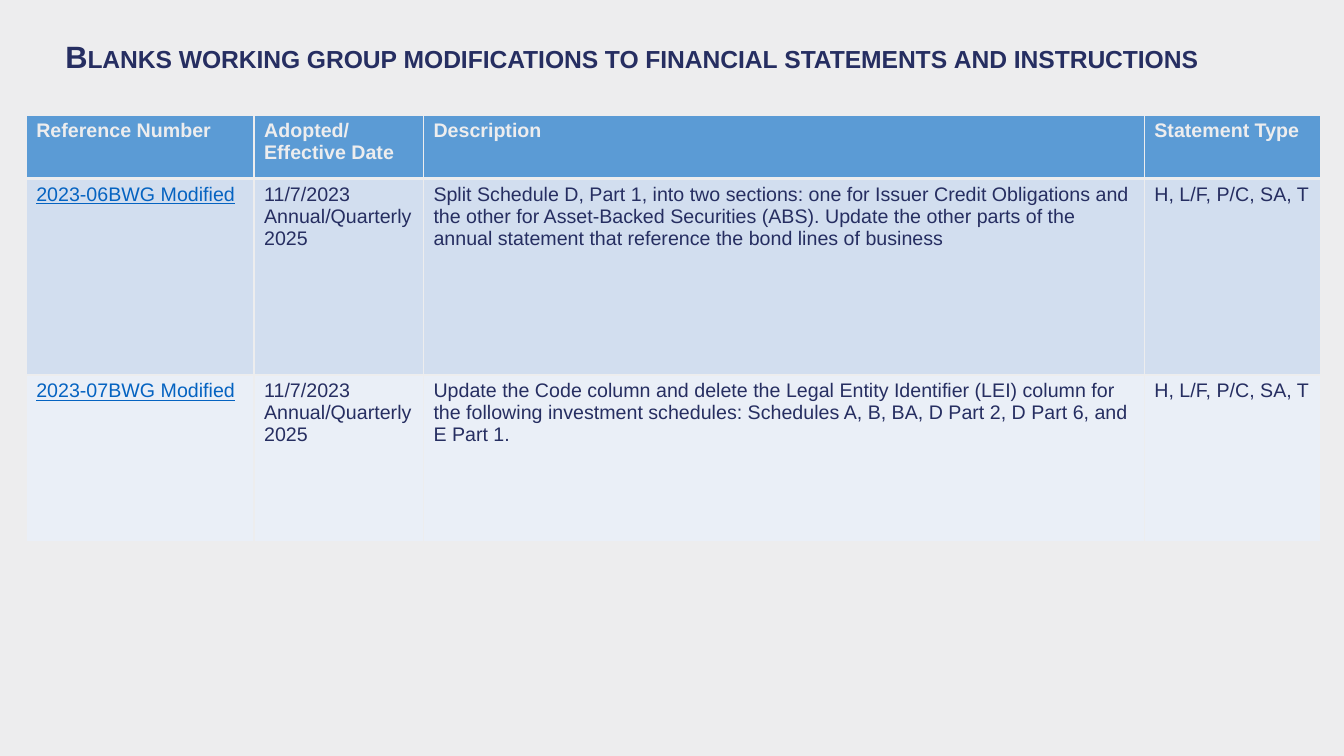
from dataclasses import dataclass

from lxml import etree
from pptx import Presentation
from pptx.dml.color import RGBColor
from pptx.oxml import ns
from pptx.util import Inches, Pt

COLORS = {
    "paper": "EDEDEE",
    "navy": "262E61",
    "header": "5B9BD5",
    "link": "0563C1",
    "band_dark": "D2DEEF",
    "band_light": "EAEFF7",
}
COLUMN_WIDTHS = [2.26, 1.68, 7.15, 1.75]


@dataclass
class Row:
    height: float
    fill: str
    cells: list[str]
    header: bool = False


ROWS = [
    Row(0.63, "header",
        ["Reference Number", "Adopted/\nEffective Date", "Description", "Statement Type"],
        header=True),
    Row(1.95, "band_dark",
        ["2023-06BWG Modified",
         "11/7/2023\nAnnual/Quarterly 2025",
         "Split Schedule D, Part 1, into two sections: one for Issuer Credit Obligations "
         "and the other for Asset-Backed Securities (ABS). Update the other parts of the "
         "annual statement that reference the bond lines of business",
         "H, L/F, P/C, SA, T"]),
    Row(1.65, "band_light",
        ["2023-07BWG Modified",
         "11/7/2023\nAnnual/Quarterly 2025",
         "Update the Code column and delete the Legal Entity Identifier (LEI) column for "
         "the following investment schedules: Schedules A, B, BA, D Part 2, D Part 6, "
         "and E Part 1.",
         "H, L/F, P/C, SA, T"]),
]


def rgb(name: str) -> RGBColor:
    return RGBColor.from_string(COLORS[name])


def format_runs(tf, size: float, color: str, bold: bool = False,
                underline: bool = False) -> None:
    for p in tf.paragraphs:
        for r in p.runs:
            r.font.name = "Arial"
            r.font.size = Pt(size)
            r.font.color.rgb = rgb(color)
            r.font.bold = bold
            r.font.underline = underline


def set_borders(cell, bottom: float) -> None:
    tcPr = cell._tc.get_or_add_tcPr()
    for i, (side, width) in enumerate([("L", 1), ("R", 1), ("T", 1), ("B", bottom)]):
        ln = etree.Element(ns.qn(f"a:ln{side}"), w=str(Pt(width)))
        fill = etree.SubElement(ln, ns.qn("a:solidFill"))
        etree.SubElement(fill, ns.qn("a:srgbClr"), val=COLORS["paper"])
        tcPr.insert(i, ln)


def add_title(s, title: str) -> None:
    sp = s.shapes.add_textbox(Inches(0.55), Inches(0.37), Inches(11.93), Inches(0.74))
    tf = sp.text_frame
    tf.word_wrap = True
    tf.text = title
    p = tf.paragraphs[0]
    p.line_spacing = 0.9
    format_runs(tf, 22, "navy", bold=True)
    p.runs[0]._r.get_or_add_rPr().set("cap", "small")


def add_modifications(s, rows: list[Row]) -> None:
    table = s.shapes.add_table(
        len(rows), len(COLUMN_WIDTHS), Inches(0.26), Inches(1.14),
        Inches(sum(COLUMN_WIDTHS)), Inches(sum(row.height for row in rows))).table
    for column, width in zip(table.columns, COLUMN_WIDTHS):
        column.width = Inches(width)
    for i, row in enumerate(rows):
        table.rows[i].height = Inches(row.height)
        for j, content in enumerate(row.cells):
            cell = table.cell(i, j)
            cell.fill.solid()
            cell.fill.fore_color.rgb = rgb(row.fill)
            above_header_rule = row.header
            set_borders(cell, 3 if above_header_rule else 1)
            cell.text_frame.text = content
            is_link = j == 0 and not row.header
            color = "paper" if row.header else "link" if is_link else "navy"
            format_runs(cell.text_frame, 14, color, row.header, is_link)


def main() -> None:
    prs = Presentation()
    prs.slide_width, prs.slide_height = Inches(13.33), Inches(7.5)
    s = prs.slides.add_slide(prs.slide_layouts[6])
    s.background.fill.solid()
    s.background.fill.fore_color.rgb = rgb("paper")
    add_modifications(s, ROWS)
    add_title(s, "Blanks working group modifications to financial statements "
                 "and instructions")
    prs.save("out.pptx")


if __name__ == "__main__":
    main()
